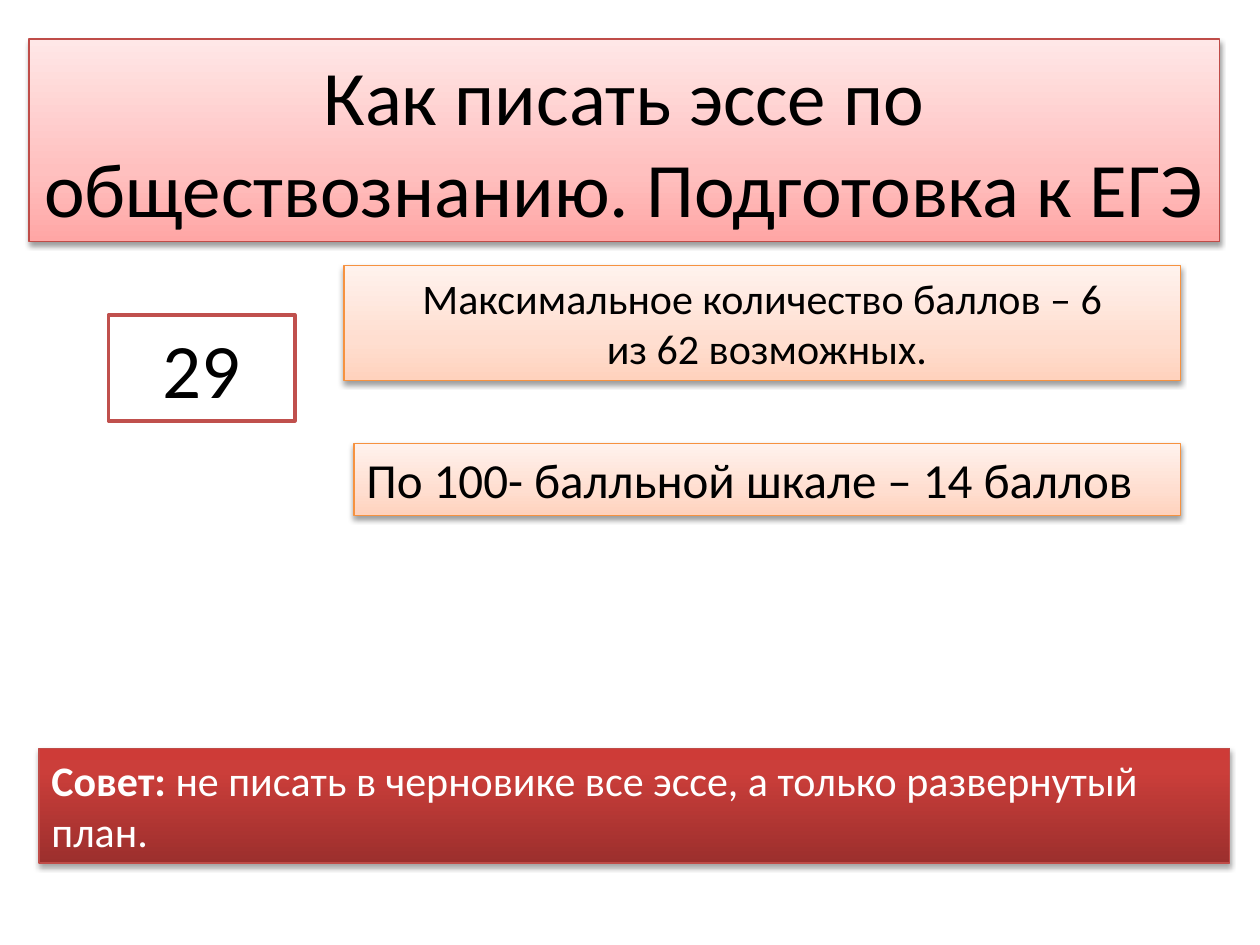
"""Builds the title slide of a lesson on writing a social studies essay."""
from copy import deepcopy
from dataclasses import dataclass
from typing import Optional

from lxml import etree
from pptx import Presentation
from pptx.dml.color import RGBColor
from pptx.enum.shapes import MSO_SHAPE
from pptx.enum.text import MSO_ANCHOR, MSO_AUTO_SIZE, PP_ALIGN
from pptx.oxml.ns import qn
from pptx.util import Inches, Pt

RECTANGLE = MSO_SHAPE.RECTANGLE
LEFT, CENTER = PP_ALIGN.LEFT, PP_ALIGN.CENTER
TOP, MIDDLE = MSO_ANCHOR.TOP, MSO_ANCHOR.MIDDLE
GROW, FIXED = MSO_AUTO_SIZE.SHAPE_TO_FIT_TEXT, MSO_AUTO_SIZE.NONE

COLUMNS, ROWS = 100, 75
FONT = "Calibri"
COLORS = {
    "black": "000000",
    "white": "FFFFFF",
    "number line": "C0504D",
    "red line": "BF4C48",
    "orange line": "F69240",
}
GRADIENTS = {
    "pink": ((0, "FFA6A5"), (0.35, "FFC0BF"), (1, "FFE7E7")),
    "peach": ((0, "FFD2BD"), (0.35, "FFDED0"), (1, "FFF2ED")),
    "red": ((0, "9C2F2D"), (0.8, "CB3E3A"), (1, "CE3B37")),
}


@dataclass(frozen=True)
class Panel:
    """A text panel placed in grid columns and rows."""
    column: float
    row: float
    width: float
    height: float
    paragraphs: tuple[str, ...]
    size: int
    line: str
    gradient: Optional[str] = None
    line_width: float = 0.75
    align: PP_ALIGN = CENTER
    anchor: MSO_ANCHOR = TOP
    autosize: MSO_AUTO_SIZE = GROW
    color: str = "black"
    lead: str = ""
    shadow_distance: float = 1.6
    shadow_opacity: int = 38


PANELS = (
    Panel(2.3, 3.1, 94.5, 16.1, ("Как писать эссе по обществознанию. Подготовка к ЕГЭ",),
          44, "red line", "pink", anchor=MIDDLE, autosize=FIXED),
    Panel(8.6, 25, 14.8, 8.4, ("29",), 44, "number line", line_width=2),
    Panel(27.3, 21.1, 66.4, 9.1,
          ("Максимальное количество баллов – 6", " из 62 возможных."),
          24, "orange line", "peach"),
    Panel(28.1, 35.2, 65.6, 5.7, ("По 100- балльной шкале – 14 баллов",),
          28, "orange line", "peach", align=LEFT),
    Panel(3.1, 59.4, 94.5, 9.1,
          ("не писать в черновике все эссе, а только развернутый план.",),
          24, "red line", "red", align=LEFT, color="white", lead="Совет: ",
          shadow_distance=1.8, shadow_opacity=35),
)


def rgb(name: str) -> RGBColor:
    """Return a named colour."""
    return RGBColor.from_string(COLORS[name])


def add_text(paragraph, text: str, *, size: int, color: str, bold: bool = False) -> None:
    """Add a formatted run to a paragraph."""
    run = paragraph.add_run()
    run.text = text
    run.font.name = FONT
    run.font.size = Pt(size)
    run.font.bold = bold
    run.font.color.rgb = rgb(color)


def fill_gradient(shape, name: str) -> None:
    """Fill a shape with a three-stop vertical gradient."""
    shape.fill.gradient()
    shape.fill.gradient_angle = 90
    stop_list = next(shape.element.iter(qn("a:gsLst")))
    stop_list.append(deepcopy(stop_list[0]))
    for stop, (position, color) in zip(shape.fill.gradient_stops, GRADIENTS[name]):
        stop.position = position
        stop.color.rgb = RGBColor.from_string(color)


def add_shadow(shape, distance: float, opacity: int) -> None:
    """Give a shape a soft shadow below it."""
    effects = shape.element.spPr.find(qn("a:effectLst"))
    shadow = etree.SubElement(
        effects, qn("a:outerShdw"), blurRad=str(Pt(3.1)), dist=str(Pt(distance)),
        dir="5400000", rotWithShape="0")
    color = etree.SubElement(shadow, qn("a:srgbClr"), val=COLORS["black"])
    etree.SubElement(color, qn("a:alpha"), val=str(opacity * 1000))


def add_panel(slide, panel: Panel, column: float, row: float) -> None:
    """Draw one panel with its text."""
    shape = slide.shapes.add_shape(
        RECTANGLE, round(panel.column * column), round(panel.row * row),
        round(panel.width * column), round(panel.height * row))
    shape.line.color.rgb = rgb(panel.line)
    shape.line.width = Pt(panel.line_width)
    shape.shadow.inherit = False
    if panel.gradient:
        fill_gradient(shape, panel.gradient)
        add_shadow(shape, panel.shadow_distance, panel.shadow_opacity)
    else:
        shape.fill.solid()
        shape.fill.fore_color.rgb = rgb("white")
    frame = shape.text_frame
    frame.word_wrap = True
    frame.auto_size = panel.autosize
    frame.vertical_anchor = panel.anchor
    for index, text in enumerate(panel.paragraphs):
        paragraph = frame.add_paragraph() if index else frame.paragraphs[0]
        paragraph.alignment = panel.align
        if panel.lead:
            add_text(paragraph, panel.lead, size=panel.size, color=panel.color, bold=True)
        add_text(paragraph, text, size=panel.size, color=panel.color)


def main() -> None:
    """Build and save the presentation."""
    presentation = Presentation()
    presentation.slide_width, presentation.slide_height = Inches(10), Inches(7.5)
    slide = presentation.slides.add_slide(presentation.slide_layouts[6])
    column = presentation.slide_width / COLUMNS
    row = presentation.slide_height / ROWS
    for panel in PANELS:
        add_panel(slide, panel, column, row)
    presentation.save("out.pptx")


if __name__ == "__main__":
    main()
